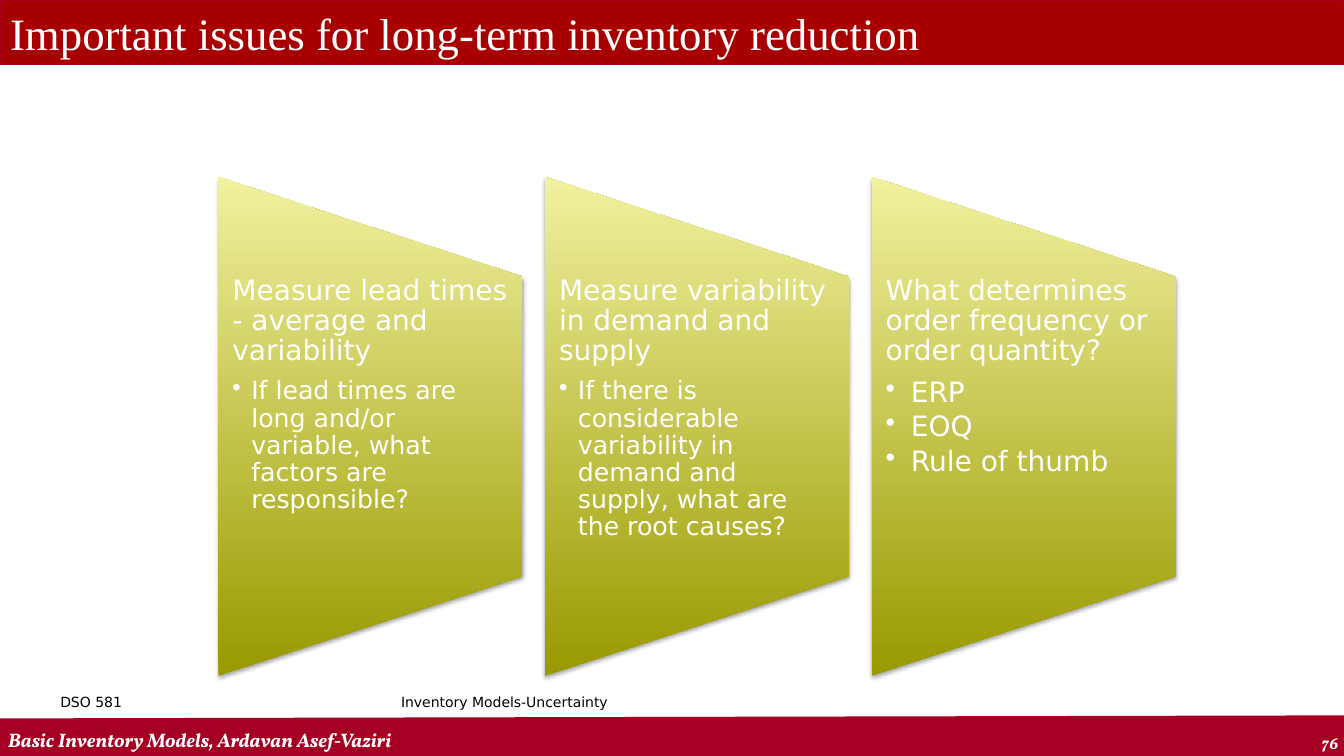
from lxml import etree
from pptx import Presentation
from pptx import util as u
from pptx.dml.color import RGBColor
from pptx.enum import dml, shapes, text
from pptx.oxml import ns, parse_xml

Pt = u.Pt
WHITE = RGBColor(0xFF, 0xFF, 0xFF)
BLACK = RGBColor(0, 0, 0)
CRIMSON = RGBColor(0xA5, 0x00, 0x23)
RED = RGBColor(0xA8, 0x00, 0x00)
OLIVE = RGBColor(0x99, 0x99, 0x00)
PALE_YELLOW = RGBColor(0xF1, 0xF1, 0x9F)

prs = Presentation()
prs.slide_width, prs.slide_height = Pt(960), Pt(540)
slide = prs.slides.add_slide(prs.slide_layouts[5])


def add_run(paragraph, words, font_name, size, color, emphasis=False):
    run = paragraph.add_run()
    run.text = words
    run.font.name = font_name
    run.font.size = Pt(size)
    run.font.color.rgb = color
    run.font.bold = run.font.italic = emphasis


def add_frame(left, top, width, height):
    frame = slide.shapes.add_textbox(Pt(left), Pt(top), Pt(width), Pt(height)).text_frame
    frame.word_wrap = True
    return frame


footer_band = slide.shapes.add_connector(
    shapes.MSO_CONNECTOR.STRAIGHT, Pt(-0.7), Pt(527.8), Pt(962), Pt(525.6))
footer_band.line.color.rgb = CRIMSON
footer_band.line.width = Pt(29.25)
etree.SubElement(footer_band._element.spPr, ns.qn("a:effectLst"))

title_bar = slide.shapes.add_shape(shapes.MSO_SHAPE.RECTANGLE, 0, Pt(-0.7), Pt(960), Pt(46.1))
title_bar.shadow.inherit = False
title_bar.fill.solid()
title_bar.fill.fore_color.rgb = RED
title_bar.line.color.rgb = RED
title_bar.line.width = Pt(0.75)

FOOTERS = [
    ("76", 891.4, 519.8, 72, 21.6, "Vollkorn", 12, WHITE, "RIGHT", "TOP"),
    ("Basic Inventory Models, Ardavan Asef-Vaziri",
     -1.4, 515.5, 752.4, 24.5, "Vollkorn", 14, WHITE, "LEFT", "BOTTOM"),
    ("DSO 581", 36, 491.8, 167.8, 36, "DejaVu Sans", 10, BLACK, "LEFT", "TOP"),
    ("Inventory Models-Uncertainty", 246.2, 491.8, 228.2, 36, "DejaVu Sans", 10, BLACK, "CENTER", "TOP"),
]
for words, left, top, width, height, font_name, size, color, align, anchor in FOOTERS:
    frame = add_frame(left, top, width, height)
    frame.vertical_anchor = text.MSO_ANCHOR[anchor]
    frame.paragraphs[0].alignment = text.PP_ALIGN[align]
    add_run(frame.paragraphs[0], words, font_name, size, color, font_name == "Vollkorn")

title = slide.shapes.title
title.left, title.top, title.width, title.height = 0, 0, Pt(960), Pt(46.1)
title.line.color.rgb = CRIMSON
title.line.width = Pt(0.75)
title.text_frame.auto_size = text.MSO_AUTO_SIZE.NONE
title.text_frame.vertical_anchor = text.MSO_ANCHOR.MIDDLE
title.text_frame.paragraphs[0].alignment = text.PP_ALIGN.LEFT
add_run(title.text_frame.paragraphs[0], "Important issues for long-term inventory reduction",
        "Times New Roman", 32, WHITE)
slide.shapes._spTree.append(title._element)

ISSUES = [
    ("Measure lead times - average and variability", 18, 13.5,
     ["If lead times are long and/or variable, what factors are responsible?"]),
    ("Measure variability in demand and supply", 18, 13.5,
     ["If there is considerable variability in demand and supply, what are the root causes?"]),
    ("What determines order frequency or order quantity?", 20, 18,
     ["ERP", "EOQ", "Rule of thumb"]),
]
PANEL_LEFT, PANEL_STEP, PANEL_MIDDLE = 156, 233.3, 304.6
PANEL_WIDTH, PANEL_HEIGHT = 217.4, 356.4
SHADOW = (
    f'<a:effectLst {ns.nsdecls("a")}><a:outerShdw blurRad="39370" dist="22860" dir="5400000" rotWithShape="0">'
    '<a:srgbClr val="000000"><a:alpha val="35000"/></a:srgbClr></a:outerShdw></a:effectLst>')

for column, (heading, bullet_size, indent, bullets) in enumerate(ISSUES):
    left = PANEL_LEFT + column * PANEL_STEP
    panel = slide.shapes.add_shape(
        shapes.MSO_SHAPE.FLOWCHART_MANUAL_OPERATION,
        Pt(left + (PANEL_WIDTH - PANEL_HEIGHT) / 2), Pt(PANEL_MIDDLE - PANEL_WIDTH / 2),
        Pt(PANEL_HEIGHT), Pt(PANEL_WIDTH))
    panel.rotation = 270
    panel.line.fill.background()
    panel.fill.gradient()
    panel.fill.gradient_angle = 90
    for stop, color, position in zip(panel.fill.gradient_stops, (OLIVE, PALE_YELLOW), (0, 1)):
        stop.color.rgb = color
        stop.position = position
    panel._element.spPr.find(ns.qn("a:gradFill")).set("rotWithShape", "0")
    panel._element.spPr.append(parse_xml(SHADOW))

    frame = add_frame(left, 197.3, PANEL_WIDTH, 213.8)
    frame.margin_left = frame.margin_right = Pt(10)
    frame.margin_top = frame.margin_bottom = 0
    frame.paragraphs[0].line_spacing = 0.9
    frame.paragraphs[0].space_after = Pt(8)
    add_run(frame.paragraphs[0], heading, "DejaVu Sans", 20, WHITE)
    for bullet in bullets:
        item = frame.add_paragraph()
        item.level = 1
        item.line_spacing = 0.9
        item.space_after = Pt(3)
        properties = item._p.get_or_add_pPr()
        properties.set("marL", str(Pt(indent)))
        properties.set("indent", str(-Pt(indent)))
        etree.SubElement(properties, ns.qn("a:buChar"), char="•")
        add_run(item, bullet, "DejaVu Sans", bullet_size, WHITE)

prs.save("out.pptx")
